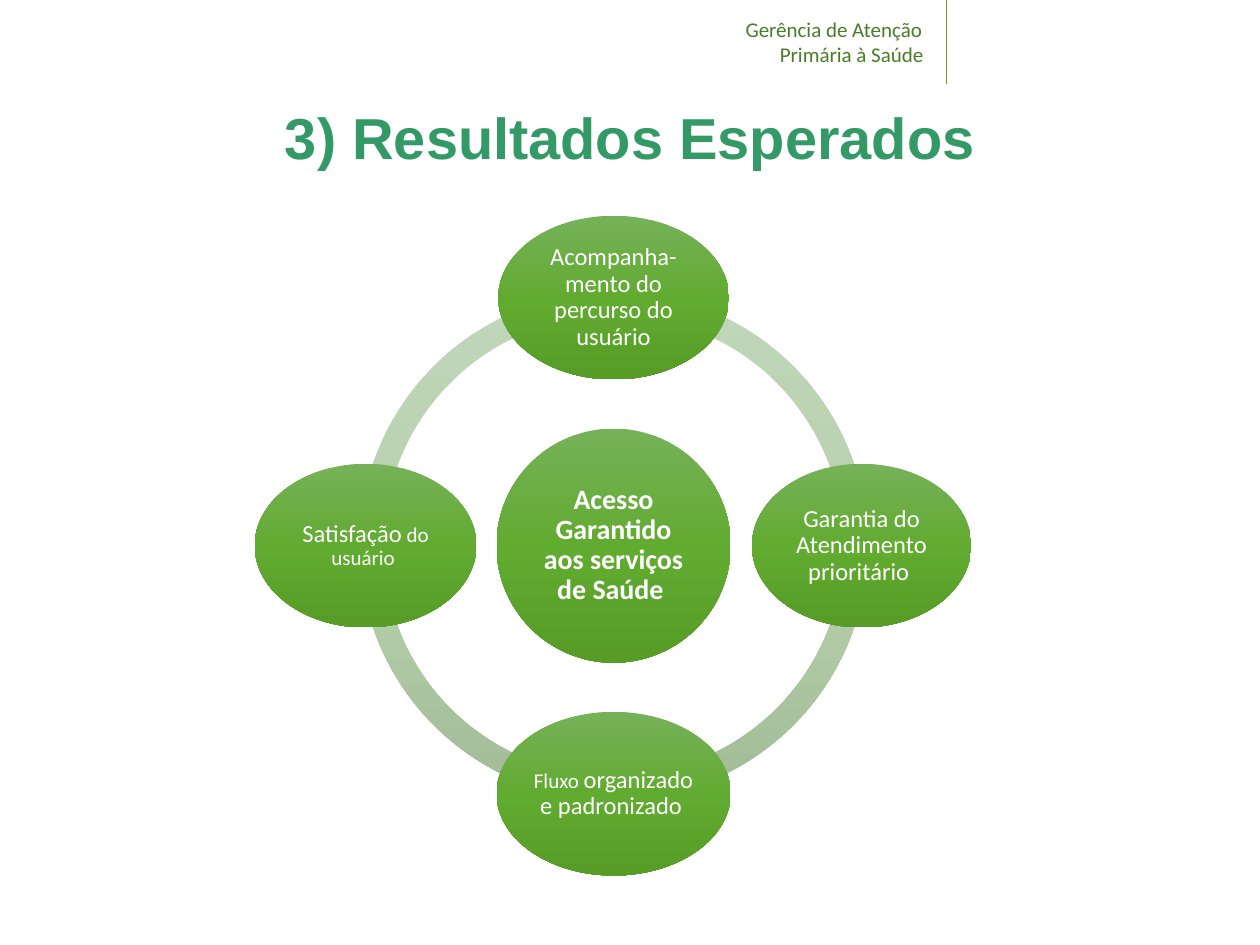
import copy

import pptx
import pptx.dml.color
import pptx.enum.shapes
import pptx.enum.text
import pptx.oxml
import pptx.oxml.ns
import pptx.util

Cm, Pt = pptx.util.Cm, pptx.util.Pt
SHAPE = pptx.enum.shapes.MSO_SHAPE
ALIGN = pptx.enum.text.PP_ALIGN
MIDDLE = pptx.enum.text.MSO_ANCHOR.MIDDLE

COLORS = {"header": "4A7C29", "rule": "739A28", "title": "339966", "text": "FFFFFF"}
RING_GRADIENT = ["C0D6B9", "B7D1AD", "A1BC97"]
OVAL_GRADIENT = ["76B158", "62AB31", "569C27"]

HEADER = [("Gerência de Atenção", ALIGN.LEFT), ("Primária à Saúde", ALIGN.RIGHT)]
TITLE = "3) Resultados Esperados"
HUB = [("Acesso Garantido aos serviços de Saúde ", 16)]
# direction from the hub (x, y), width in cm, runs (text, size)
RESULTS = [
    ((0, -1), 4.65, [("Acompanha-mento do percurso do usuário", 14)]),
    ((1, 0), 4.42, [("Garantia do Atendimento prioritário ", 14)]),
    ((0, 1), 4.72, [("Fluxo ", 12), ("organizado e padronizado", 14), (" ", 12)]),
    ((-1, 0), 4.47, [("Satisfação", 14), (" do usuário ", 12)]),
]

CENTER_X, CENTER_Y = 12.37, 11
ORBIT = 5
RING_SIZE, HUB_SIZE, OVAL_HEIGHT = 10.24, 4.72, 3.3
RING_THICKNESS = 0.046
QUARTERS = [0, 54, 108, 162]  # quarter turns in the units of the arc's adjustments


def rgb(value):
    return pptx.dml.color.RGBColor.from_string(value)


def add_run(p, text, size, color, font="Calibri", bold=False):
    r = p.add_run()
    r.text = text
    r.font.name, r.font.size, r.font.bold = font, Pt(size), bold
    r.font.color.rgb = rgb(color)


def add_textbox(slide, left, top, width, height):
    tf = slide.shapes.add_textbox(Cm(left), Cm(top), Cm(width), Cm(height)).text_frame
    tf.word_wrap = True
    return tf


def add_gradient_shape(slide, kind, x, y, width, height, colors):
    """Add a borderless shape centred on x, y with evenly spaced stops from top to bottom."""
    s = slide.shapes.add_shape(
        kind, Cm(x - width / 2), Cm(y - height / 2), Cm(width), Cm(height))
    s.shadow.inherit = False
    s.line.fill.background()
    s.fill.gradient()
    s.fill.gradient_angle = 270
    stop_list = s._element.spPr.find(".//" + pptx.oxml.ns.qn("a:gsLst"))
    stop_list.append(copy.deepcopy(stop_list[0]))
    for i, (stop, color) in enumerate(zip(s.fill.gradient_stops, colors)):
        stop.position = i / (len(colors) - 1)
        stop.color.rgb = rgb(color)
    return s


def add_oval(slide, x, y, width, height, runs, bold=False):
    s = add_gradient_shape(slide, SHAPE.OVAL, x, y, width, height, OVAL_GRADIENT)
    tf = s.text_frame
    tf.word_wrap = True
    tf.vertical_anchor = MIDDLE
    tf.margin_left = tf.margin_right = tf.margin_top = tf.margin_bottom = Cm(0.05)
    p = tf.paragraphs[0]
    p.alignment, p.line_spacing = ALIGN.CENTER, 0.9
    for text, size in runs:
        add_run(p, text, size, COLORS["text"], bold=bold)


def add_header(slide):
    tf = add_textbox(slide, 14.78, 0.2, 4.09, 1.27)
    for i, (text, align) in enumerate(HEADER):
        p = tf.add_paragraph() if i else tf.paragraphs[0]
        p.alignment = align
        add_run(p, text, 12, COLORS["header"])
    rule = slide.shapes.add_connector(
        pptx.enum.shapes.MSO_CONNECTOR.STRAIGHT, Cm(19.08), Cm(0), Cm(19.08), Cm(1.7))
    rule.line.color.rgb = rgb(COLORS["rule"])
    rule.line.width = Pt(1)
    rule._element.spPr.append(pptx.oxml.parse_xml(
        "<a:effectLst %s/>" % pptx.oxml.ns.nsdecls("a")))


def add_title(slide):
    tf = add_textbox(slide, 1.75, 1.42, 21.9, 2.84)
    tf.vertical_anchor = MIDDLE
    p = tf.paragraphs[0]
    p.alignment, p.line_spacing = ALIGN.CENTER, 0.9
    add_run(p, TITLE, 33, COLORS["title"], "Arial", True)


def add_cycle(slide):
    for start, end in zip(QUARTERS, QUARTERS[1:] + QUARTERS[:1]):
        arc = add_gradient_shape(slide, SHAPE.BLOCK_ARC, CENTER_X, CENTER_Y,
                                 RING_SIZE, RING_SIZE, RING_GRADIENT)
        for i, value in enumerate((start, end, RING_THICKNESS)):
            arc.adjustments[i] = value
    add_oval(slide, CENTER_X, CENTER_Y, HUB_SIZE, HUB_SIZE, HUB, bold=True)
    for (dx, dy), width, runs in RESULTS:
        add_oval(slide, CENTER_X + dx * ORBIT, CENTER_Y + dy * ORBIT,
                 width, OVAL_HEIGHT, runs)


def main():
    prs = pptx.Presentation()
    prs.slide_width, prs.slide_height = Cm(25.4), Cm(19.05)
    slide = prs.slides.add_slide(prs.slide_layouts[6])
    add_header(slide)
    add_title(slide)
    add_cycle(slide)
    prs.save("out.pptx")


if __name__ == "__main__":
    main()
